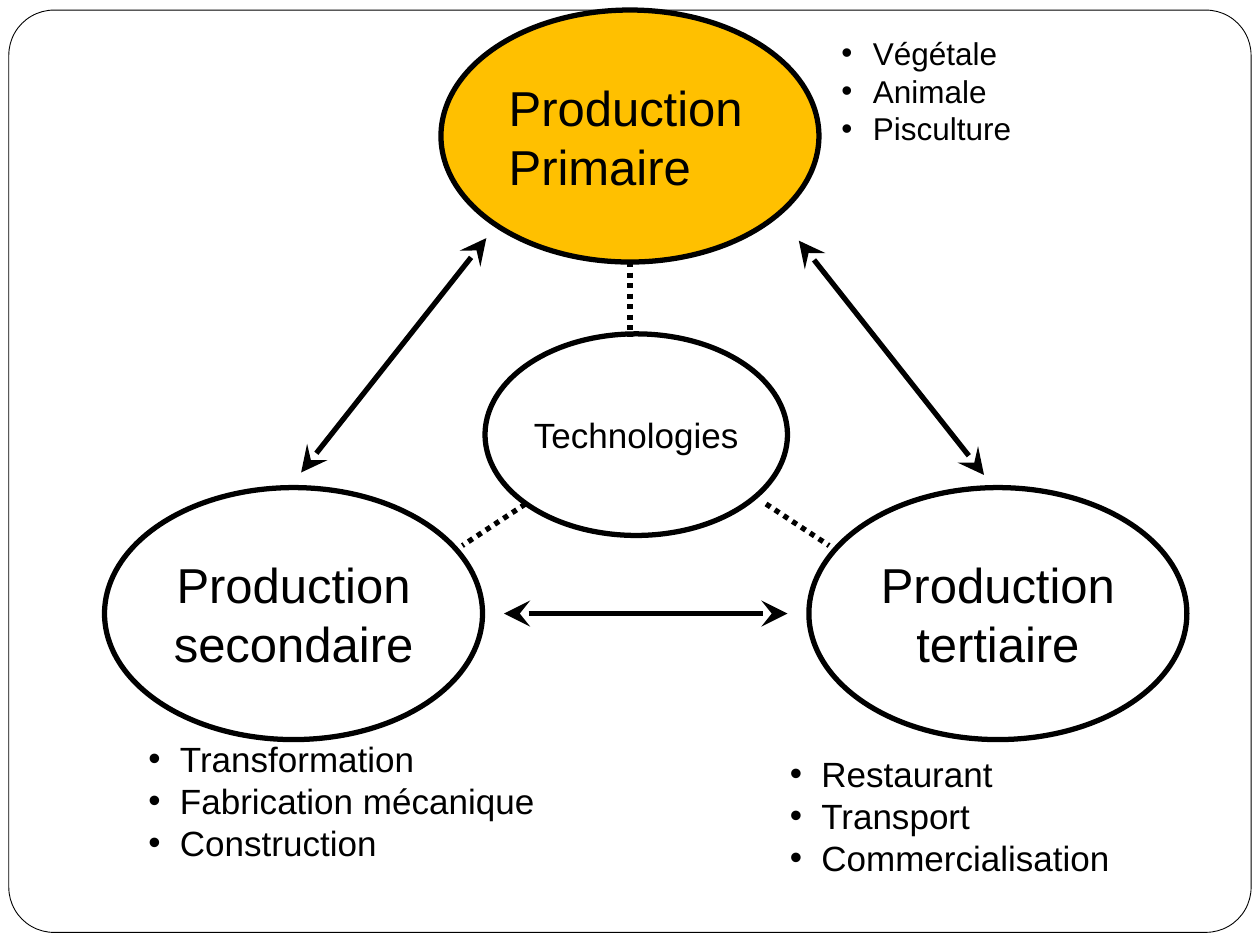
"""Build a slide on the three production sectors and the technologies between them."""
import pptx
import pptx.util
import pptx.dml.color
import pptx.enum.dml
import pptx.enum.shapes
import pptx.enum.text
import pptx.oxml.ns
import lxml.etree

Inches = pptx.util.Inches
Pt = pptx.util.Pt
BLACK = pptx.dml.color.RGBColor(0x00, 0x00, 0x00)
WHITE = pptx.dml.color.RGBColor(0xFF, 0xFF, 0xFF)
GOLD = pptx.dml.color.RGBColor(0xFF, 0xC0, 0x00)
SHAPE = pptx.enum.shapes.MSO_SHAPE
ALIGN = pptx.enum.text.PP_ALIGN
qn = pptx.oxml.ns.qn


def add_text(frame, lines, size, align=ALIGN.LEFT, bullet=False):
    for i, line in enumerate(lines):
        para = frame.paragraphs[0] if i == 0 else frame.add_paragraph()
        para.alignment = align
        if bullet:
            props = para._p.get_or_add_pPr()
            props.set("marL", str(Inches(0.25)))
            props.set("indent", str(-Inches(0.25)))
            lxml.etree.SubElement(props, qn("a:buFont"), typeface="Arial")
            lxml.etree.SubElement(props, qn("a:buChar"), char="•")
        run = para.add_run()
        run.text = line
        run.font.name = "Arial"
        run.font.size = Pt(size)
        run.font.color.rgb = BLACK


def add_shape(kind, box, weight):
    shape = slide.shapes.add_shape(kind, *map(Inches, box))
    shape.shadow.inherit = False
    shape.line.color.rgb = BLACK
    shape.line.width = Pt(weight)
    return shape


deck = pptx.Presentation()
deck.slide_width = Inches(10)
deck.slide_height = Inches(7.5)
slide = deck.slides.add_slide(deck.slide_layouts[6])

frame = add_shape(SHAPE.ROUNDED_RECTANGLE, (0.07, 0.08, 9.86, 7.32), 0.5)
frame.adjustments[0] = 0.049
frame.fill.solid()
frame.fill.fore_color.rgb = WHITE

ovals = [
    (0.83, 3.87, 3, 2, ["Production", "secondaire"], 28, ALIGN.CENTER, None),
    (6.42, 3.87, 3, 2, ["Production", "tertiaire"], 28, ALIGN.CENTER, None),
    (3.5, 0.08, 3, 2, ["Production", "Primaire"], 28, ALIGN.LEFT, GOLD),
    (3.85, 2.65, 2.4, 1.6, ["Technologies"], 20, ALIGN.CENTER, None),
]
for left, top, width, height, lines, size, align, fill in ovals:
    oval = add_shape(SHAPE.OVAL, (left, top, width, height), 3)
    if fill is None:
        oval.fill.background()
    else:
        oval.fill.solid()
        oval.fill.fore_color.rgb = fill
    oval.text_frame.word_wrap = False
    oval.text_frame.vertical_anchor = pptx.enum.text.MSO_ANCHOR.MIDDLE
    add_text(oval.text_frame, lines, size, align)

lists = [
    (6.17, 5.92, 3.83, 1.11, 20, ["Restaurant", "Transport", "Commercialisation"]),
    (1.08, 5.8, 3.5, 1.45, 20, ["Transformation", "Fabrication mécanique", "Construction"]),
    (6.58, 0.22, 3.42, 1.7, 18, ["Végétale", "Animale", "Pisculture"]),
]
for left, top, width, height, size, lines in lists:
    box = slide.shapes.add_textbox(*map(Inches, (left, top, width, height)))
    box.text_frame.word_wrap = True
    add_text(box.text_frame, lines, size, bullet=True)

links = [
    (2.39, 3.75, 3.86, 1.89, True),
    (4, 4.87, 6.25, 4.87, True),
    (7.81, 3.77, 6.34, 1.91, True),
    (5, 2.08, 5, 2.67, False),
    (4.17, 4, 3.67, 4.33, False),
    (6.08, 4, 6.58, 4.33, False),
]
for *ends, arrow in links:
    link = slide.shapes.add_connector(
        pptx.enum.shapes.MSO_CONNECTOR.STRAIGHT, *map(Inches, ends))
    link.line.color.rgb = BLACK
    link.line.width = Pt(3)
    if arrow:
        line = link.line._get_or_add_ln()
        for tag in ("a:headEnd", "a:tailEnd"):
            lxml.etree.SubElement(line, qn(tag), type="stealth", w="lg", len="lg")
    else:
        link.line.dash_style = pptx.enum.dml.MSO_LINE.ROUND_DOT
    lxml.etree.SubElement(link._element.spPr, qn("a:effectLst"))

deck.save("out.pptx")
